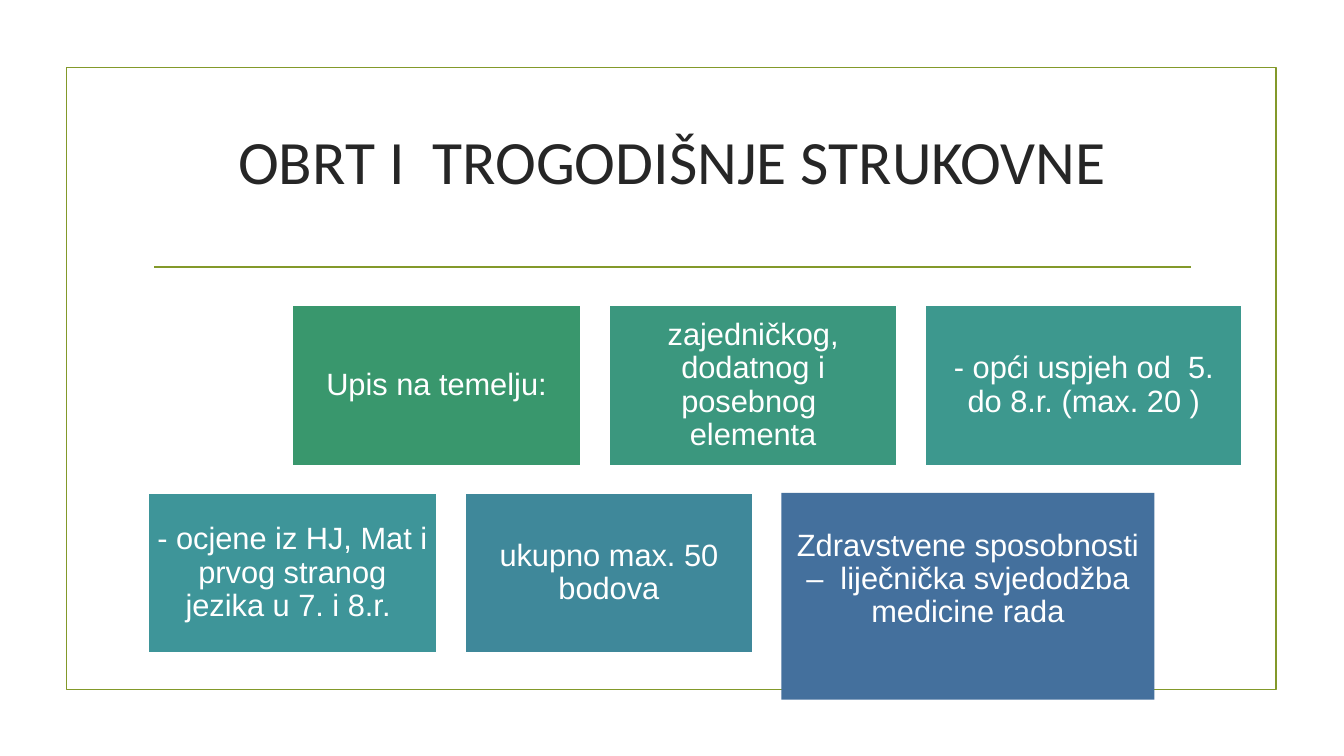
from pptx import Presentation
from pptx.dml.color import RGBColor
from pptx.enum.shapes import MSO_CONNECTOR, MSO_SHAPE
from pptx.enum.text import MSO_ANCHOR, PP_ALIGN
from pptx.oxml.ns import qn
from pptx.util import Inches, Pt
from lxml import etree

COLORS = {
    "accent": "83992A", "title": "262626", "white": "FFFFFF",
    "basis": "39976D", "elements": "3B977E", "success": "3D988E",
    "grades": "3E9599", "total": "3F889A", "health": "44709D",
}

# Card grid: pitch of columns and rows, and the standard card size
COL, ROW = 3.14, 1.86
CARD_W, CARD_H = 2.86, 1.59
TOP = 3.03
INSET, LINE_HEIGHT = 0.09, 0.33


def color(name):
    return RGBColor.from_string(COLORS[name])


def put_text(sp, text, *, size, font, fill, spacing=1.0, insets=(INSET,) * 4):
    tf = sp.text_frame
    tf.word_wrap = True
    tf.vertical_anchor = MSO_ANCHOR.MIDDLE
    tf.margin_left, tf.margin_top, tf.margin_right, tf.margin_bottom = map(Inches, insets)
    p = tf.paragraphs[0]
    p.alignment = PP_ALIGN.CENTER
    p.line_spacing = spacing
    r = p.add_run()
    r.text = text
    r.font.size = Pt(size)
    r.font.name = font
    r.font.color.rgb = color(fill)


class Deck:
    line_width = Pt(1.25)
    title_style = dict(size=44, font="Calibri", fill="title",
                       insets=(0.1, 0.05, 0.1, 0.05))
    card_style = dict(size=22, font="Arial", fill="white", spacing=0.9)

    def __init__(self, width, height):
        self.prs = Presentation()
        self.prs.slide_width, self.prs.slide_height = Inches(width), Inches(height)
        self.s = self.prs.slides.add_slide(self.prs.slide_layouts[6])

    def rect(self, x, y, w, h, fill=None, line=None):
        sp = self.s.shapes.add_shape(MSO_SHAPE.RECTANGLE, *map(Inches, (x, y, w, h)))
        sp.shadow.inherit = False
        if fill:
            sp.fill.solid()
            sp.fill.fore_color.rgb = color(fill)
        else:
            sp.fill.background()
        if line:
            sp.line.color.rgb = color(line)
            sp.line.width = self.line_width
        else:
            sp.line.fill.background()
        return sp

    def rule(self, x1, x2, y):
        cn = self.s.shapes.add_connector(
            MSO_CONNECTOR.STRAIGHT, *map(Inches, (x1, y, x2, y)))
        cn.line.color.rgb = color("accent")
        cn.line.width = self.line_width
        etree.SubElement(cn._element.spPr, qn("a:effectLst"))

    def title(self, text, x, y, w, h):
        sp = self.s.shapes.add_textbox(*map(Inches, (x, y, w, h)))
        put_text(sp, text, **self.title_style)

    def card(self, text, fill, left, col, row, w=CARD_W, h=CARD_H,
             line="white", **fmt):
        sp = self.rect(left + col * COL, TOP + row * ROW, w, h, fill, line)
        put_text(sp, text, **{**self.card_style, **fmt})


def main():
    deck = Deck(13.33, 7.5)

    # Frame, title and rule
    deck.rect(0.66, 0.67, 12, 6.17, line="accent")
    deck.rule(1.53, 11.81, 2.65)
    deck.title("OBRT I  TROGODIŠNJE STRUKOVNE", 1.42, 1.07, 10.5, 1.04)

    # Cards: each row has its own left edge; some cards are larger
    rows = [
        (2.9, [
            ("Upis na temelju:", "basis", {}),
            ("zajedničkog, dodatnog i posebnog  elementa", "elements", {}),
            ("- opći uspjeh od  5. do 8.r. (max. 20 )", "success", dict(w=3.14)),
        ]),
        (1.47, [
            ("- ocjene iz HJ, Mat i prvog stranog jezika u 7. i 8.r. ", "grades", {}),
            ("ukupno max. 50 bodova", "total", {}),
            ("Zdravstvene sposobnosti –  liječnička svjedodžba medicine rada", "health",
             dict(w=3.7, h=2.05, line=None,
                  insets=(INSET, INSET, INSET, INSET + LINE_HEIGHT))),
        ]),
    ]
    for row, (left, cards) in enumerate(rows):
        for col, (text, fill, options) in enumerate(cards):
            deck.card(text, fill, left, col, row, **options)

    deck.prs.save("out.pptx")


if __name__ == "__main__":
    main()
